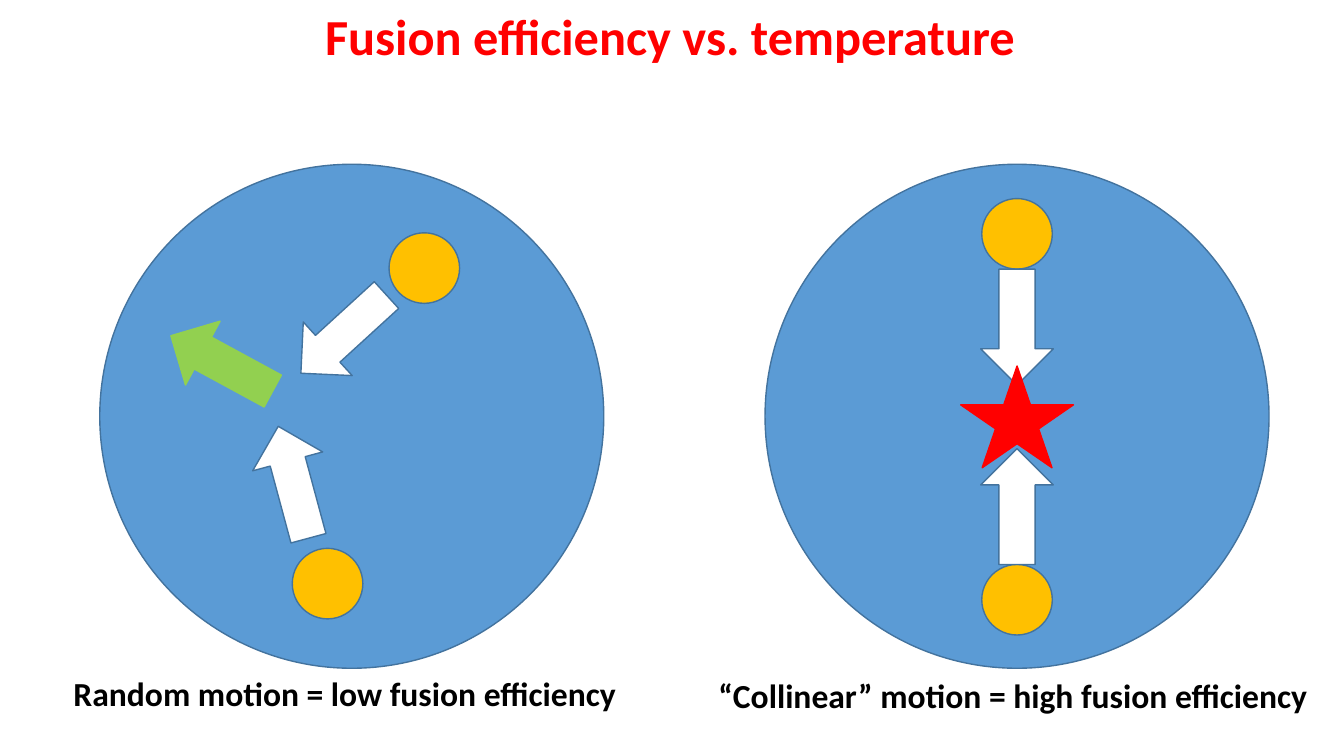
from pptx import Presentation
from pptx.dml.color import RGBColor
from pptx.enum.shapes import MSO_SHAPE as Preset
from pptx.enum.text import MSO_ANCHOR as Anchor, MSO_AUTO_SIZE as AutoSize, PP_ALIGN as Align
from pptx.util import Pt


def colour(value):
    return RGBColor.from_string(value)


class Diagram:
    font = "Calibri"
    black, white, red, green = "000000", "FFFFFF", "FF0000", "92D050"
    blue, outline, gold = "5B9BD5", "43739E", "FFC000"
    plasma_top, plasma_size = 117.36, 360
    particle_size = 50.4
    arrow_width, arrow_height = 51.84, 82.8

    def __init__(self, page):
        self.page = page
        self.shapes = page.shapes

    def start_group(self):
        self.shapes = self.page.shapes.add_group_shape().shapes

    def end_group(self):
        self.shapes = self.page.shapes

    def shape(self, preset, left, top, width, height, fill, line, rotation=0):
        shape = self.shapes.add_shape(preset, Pt(left), Pt(top), Pt(width), Pt(height))
        shape.shadow.inherit = False
        shape.fill.solid()
        shape.fill.fore_color.rgb = colour(fill)
        shape.line.color.rgb = colour(line)
        shape.line.width = Pt(1)
        shape.rotation = rotation

    def plasma(self, left):
        self.shape(Preset.OVAL, left, self.plasma_top, self.plasma_size,
                   self.plasma_size, self.blue, self.outline)

    def particle(self, left, top):
        self.shape(Preset.OVAL, left, top, self.particle_size,
                   self.particle_size, self.gold, self.outline)

    def arrow(self, left, top, rotation, fill=white, line=outline):
        self.shape(Preset.DOWN_ARROW, left, top, self.arrow_width,
                   self.arrow_height, fill, line, rotation)

    def star(self, left, top, width, height):
        self.shape(Preset.STAR_5_POINT, left, top, width, height, self.red, self.red)

    def set_text(self, box, text, size, ink, align):
        frame = box.text_frame
        frame.word_wrap = True
        frame.auto_size = AutoSize.SHAPE_TO_FIT_TEXT
        frame.vertical_anchor = Anchor.TOP
        frame.text = text
        para = frame.paragraphs[0]
        para.alignment = align
        para.font.name = self.font
        para.font.size = Pt(size)
        para.font.bold = True
        para.font.color.rgb = colour(ink)

    def title(self, text, left, top, width, height):
        box = self.page.shapes.title
        box.left, box.top, box.width, box.height = Pt(left), Pt(top), Pt(width), Pt(height)
        self.set_text(box, text, 36, self.red, Align.CENTER)

    def caption(self, text, left, top, width):
        box = self.shapes.add_textbox(Pt(left), Pt(top), Pt(width), Pt(36))
        self.set_text(box, text, 24, self.black, Align.LEFT)


def main():
    deck = Presentation()
    deck.slide_width, deck.slide_height = Pt(960), Pt(540)
    diagram = Diagram(deck.slides.add_slide(deck.slide_layouts[5]))
    diagram.title("Fusion efficiency vs. temperature", 96.5, 0, 764.6, 51.1)

    diagram.start_group()
    diagram.plasma(546.5)
    for top in (141.84, 403.2):
        diagram.particle(701.3, top)
    for top, rotation in ((192.24, 0), (320.4, 180)):
        diagram.arrow(700.5, top, rotation)
    diagram.star(686.2, 261.4, 80.6, 72.7)
    diagram.end_group()

    diagram.start_group()
    diagram.plasma(71.3)
    for left, top in ((208.8, 391.7), (277.9, 166.3)):
        diagram.particle(left, top)
    for left, top, rotation in ((219.6, 197.3, 47.6), (183.6, 303.1, 164.9)):
        diagram.arrow(left, top, rotation)
    diagram.arrow(132.5, 218.2, 118.5, diagram.green, diagram.green)
    diagram.caption("Random motion = low fusion efficiency", 45.4, 477.4, 432.7)
    diagram.end_group()

    diagram.caption("“Collinear” motion = high fusion efficiency", 506, 478.8, 445.7)
    deck.save("out.pptx")


if __name__ == "__main__":
    main()
